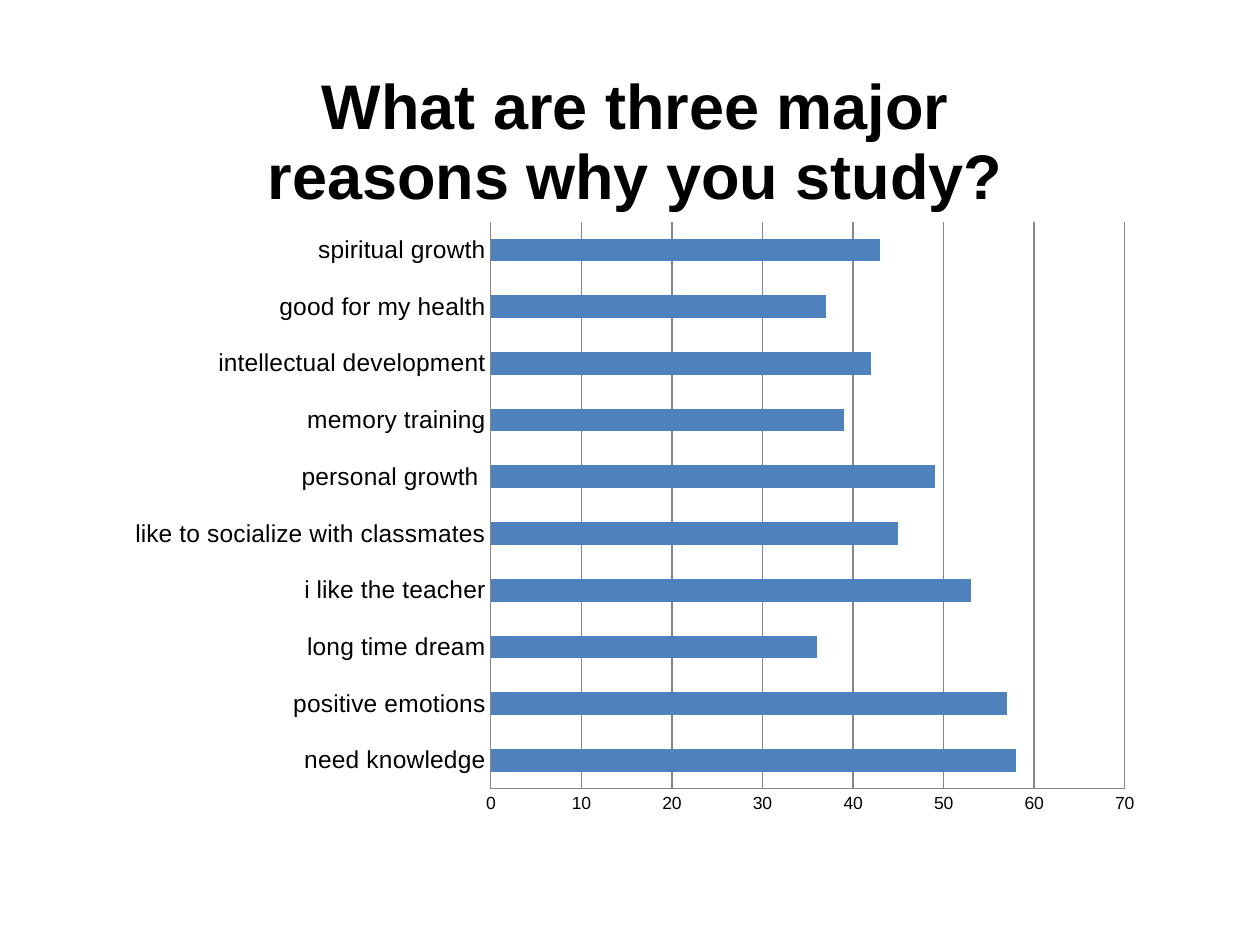
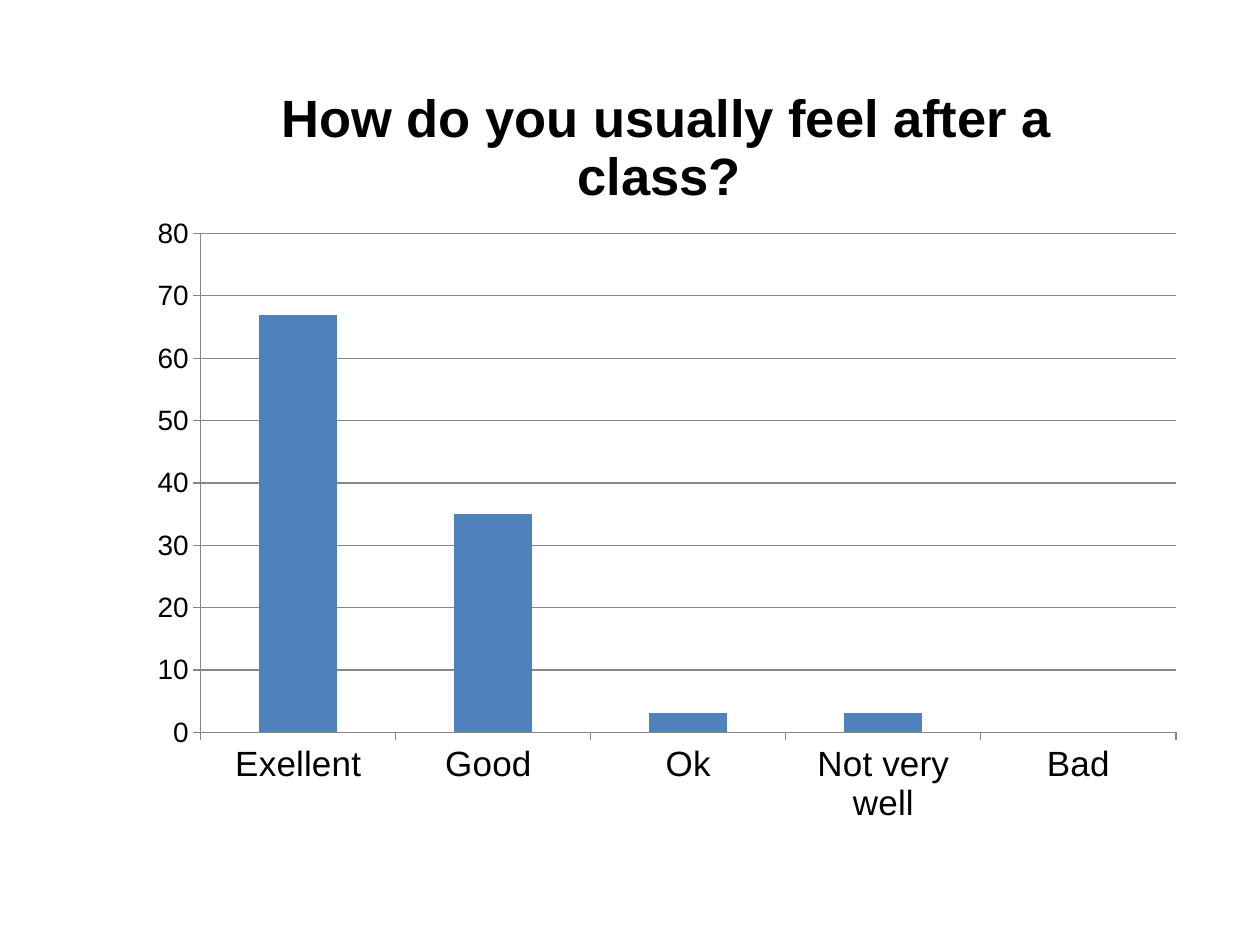
from dataclasses import dataclass

import lxml.etree
import pptx
import pptx.chart.data
import pptx.dml.color
import pptx.enum.chart
import pptx.oxml.ns
import pptx.util

EMU_PER_PX = 9525
FONT = "Arial"
COLORS = {"text": "000000", "bar": "4F81BD", "line": "878787"}
ChartType = pptx.enum.chart.XL_CHART_TYPE
TickMark = pptx.enum.chart.XL_TICK_MARK


@dataclass(frozen=True)
class Box:
    left: int
    top: int
    width: int
    height: int


@dataclass(frozen=True)
class SurveyChart:
    question: str
    series_name: str
    answers: dict[str, int]
    kind: ChartType
    frame: Box
    plot: Box
    tick_mark: TickMark
    title_size: int
    category_size: int
    value_size: int
    maximum: int


SURVEY_CHARTS = [
    SurveyChart(
        question="What are three major reasons why you study?",
        series_name="Series 1",
        answers={
            "need knowledge": 58,
            "positive emotions": 57,
            "long time dream": 36,
            "i like the teacher": 53,
            "like to socialize with classmates": 45,
            "personal growth ": 49,
            "memory training": 39,
            "intellectual development": 42,
            "good for my health": 37,
            "spiritual growth": 43,
        },
        kind=ChartType.BAR_CLUSTERED,
        frame=Box(88, 24, 792, 608),
        plot=Box(374, 169, 483, 432),
        tick_mark=TickMark.NONE,
        title_size=36,
        category_size=14,
        value_size=10,
        maximum=70,
    ),
    SurveyChart(
        question="How do you usually feel after a class? ",
        series_name="How do you usually feel after a class? ",
        answers={"Exellent": 67, "Good ": 35, "Ok": 3, "Not very well": 3, "Bad": 0},
        kind=ChartType.COLUMN_CLUSTERED,
        frame=Box(104, 40, 808, 600),
        plot=Box(153, 178, 743, 380),
        tick_mark=TickMark.OUTSIDE,
        title_size=30,
        category_size=20,
        value_size=16,
        maximum=80,
    ),
]


def px(length: int) -> pptx.util.Emu:
    return pptx.util.Emu(length * EMU_PER_PX)


def rgb(name: str) -> pptx.dml.color.RGBColor:
    return pptx.dml.color.RGBColor.from_string(COLORS[name])


def style_font(font, size: int, bold: bool = False) -> None:
    font.name = FONT
    font.size = pptx.util.Pt(size)
    font.bold = bold
    font.color.rgb = rgb("text")


def style_line(line) -> None:
    line.color.rgb = rgb("line")
    line.width = pptx.util.Pt(0.75)


def place_plot(chart, frame: Box, plot: Box) -> None:
    qn = pptx.oxml.ns.qn
    plot_area = chart.element.find(f".//{qn('c:plotArea')}")
    for layout in plot_area.findall(qn("c:layout")):
        plot_area.remove(layout)
    layout = lxml.etree.Element(qn("c:layout"))
    plot_area.insert(0, layout)
    manual = lxml.etree.SubElement(layout, qn("c:manualLayout"))
    settings = {
        "layoutTarget": "inner",
        "xMode": "edge",
        "yMode": "edge",
        "x": (plot.left - frame.left) / frame.width,
        "y": (plot.top - frame.top) / frame.height,
        "w": plot.width / frame.width,
        "h": plot.height / frame.height,
    }
    for name, value in settings.items():
        lxml.etree.SubElement(manual, qn(f"c:{name}")).set("val", str(value))


def style_axes(chart, survey: SurveyChart) -> None:
    sizes = (survey.category_size, survey.value_size)
    for axis, size in zip((chart.category_axis, chart.value_axis), sizes):
        axis.major_tick_mark = survey.tick_mark
        axis.minor_tick_mark = TickMark.NONE
        style_font(axis.tick_labels.font, size)
        style_line(axis.format.line)
    chart.category_axis.has_major_gridlines = False
    value_axis = chart.value_axis
    value_axis.minimum_scale = 0
    value_axis.maximum_scale = survey.maximum
    value_axis.major_unit = 10
    value_axis.has_major_gridlines = True
    style_line(value_axis.major_gridlines.format.line)


def add_survey_chart(slide, survey: SurveyChart) -> None:
    data = pptx.chart.data.CategoryChartData()
    data.categories = list(survey.answers)
    data.add_series(survey.series_name, list(survey.answers.values()))
    frame = survey.frame
    chart = slide.shapes.add_chart(
        survey.kind, px(frame.left), px(frame.top), px(frame.width), px(frame.height), data
    ).chart
    style_font(chart.font, survey.value_size)
    chart.has_legend = False
    chart.has_title = True
    paragraph = chart.chart_title.text_frame.paragraphs[0]
    paragraph.text = survey.question
    for run in paragraph.runs:
        style_font(run.font, survey.title_size, bold=True)
    style_axes(chart, survey)
    bars = chart.plots[0]
    bars.vary_by_categories = False
    bars.gap_width = 150
    fill = bars.series[0].format.fill
    fill.solid()
    fill.fore_color.rgb = rgb("bar")
    place_plot(chart, frame, survey.plot)


def main() -> None:
    presentation = pptx.Presentation()
    presentation.slide_width = px(960)
    presentation.slide_height = px(720)
    for survey in SURVEY_CHARTS:
        slide = presentation.slides.add_slide(presentation.slide_layouts[6])
        add_survey_chart(slide, survey)
    presentation.save("out.pptx")


if __name__ == "__main__":
    main()
